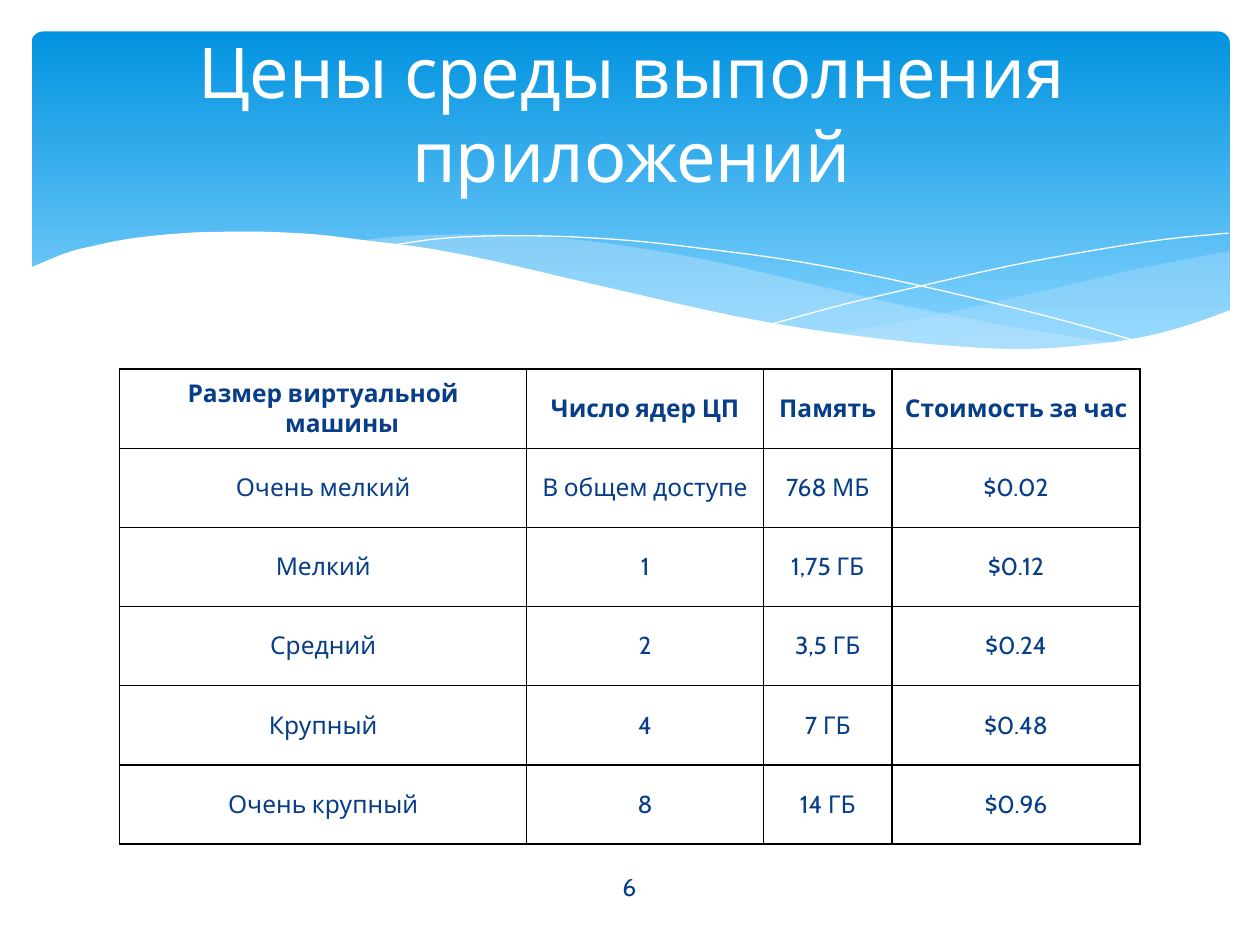
from pptx import Presentation
from pptx import util as u
from pptx.dml.color import RGBColor
from pptx.enum import shapes, text
from pptx.oxml import parse_xml
from pptx.oxml.ns import nsdecls, qn

FONT = "Cabin"
NAVY = "073E87"
WHITE = "FFFFFF"
PALE_BLUE = "C6E7FC"

RIGHT_SWELL_TOP = [(9.76, 1.99), (9.35, 2.07), (8.91, 2.16), (8.32, 2.3), (7.79, 2.42),
                   (7.29, 2.53), (6.61, 2.65)]
RIGHT_SWELL_BOTTOM = [(6.61, 2.65), (7.05, 2.71), (7.57, 2.76), (8.03, 2.78), (8.54, 2.76),
                      (8.97, 2.7), (9.35, 2.61), (9.76, 2.47)]
MIDDLE_SWELL_TOP = [(8.93, 2.73), (8.37, 2.65), (7.75, 2.54), (7.06, 2.4), (6.29, 2.22),
                    (5.69, 2.08), (5.14, 1.98), (4.65, 1.91), (4.2, 1.87), (3.8, 1.86),
                    (3.28, 1.87), (2.86, 1.91)]
MIDDLE_SWELL_BOTTOM = [(2.86, 1.91), (3.42, 1.99), (4.04, 2.11), (4.91, 2.32), (5.66, 2.48),
                       (6.34, 2.61), (6.95, 2.7), (7.48, 2.76), (7.96, 2.78), (8.48, 2.77),
                       (8.93, 2.73)]
FALLING_LINE = [(3.09, 1.95), (3.53, 1.89), (4.16, 1.87), (4.89, 1.9), (5.56, 1.97),
                (6.36, 2.08), (7.27, 2.26), (8.31, 2.51), (9.07, 2.72)]
RISING_LINE = [(6.13, 2.57), (6.72, 2.41), (7.48, 2.23), (8.06, 2.1), (8.66, 1.99),
               (9.24, 1.9), (9.75, 1.85)]
WHITE_WAVE = [(9.77, 2.46), (9.4, 2.59), (8.99, 2.69), (8.5, 2.75), (8.09, 2.77),
              (7.61, 2.75), (7.08, 2.7), (6.47, 2.62), (5.79, 2.5), (5.03, 2.33),
              (4.47, 2.2), (3.91, 2.07), (3.39, 1.97), (2.92, 1.91), (2.5, 1.86),
              (2.11, 1.84), (1.77, 1.84), (1.46, 1.85), (1.06, 1.89), (0.75, 1.95),
              (0.52, 2.01), (0.23, 2.13)]

PRICES = [
    ["Размер виртуальной машины", "Число ядер ЦП", "Память", "Стоимость за час"],
    ["Очень мелкий", "В общем доступе", "768 МБ", "$0.02"],
    ["Мелкий", "1", "1,75 ГБ", "$0.12"],
    ["Средний", "2", "3,5 ГБ", "$0.24"],
    ["Крупный", "4", "7 ГБ", "$0.48"],
    ["Очень крупный", "8", "14 ГБ", "$0.96"],
]


def color(value):
    return RGBColor.from_string(value)


def write(frame, content, size=14, fill=NAVY, bold=False, hanging=0):
    frame.word_wrap = True
    paragraph = frame.paragraphs[0]
    paragraph.alignment = text.PP_ALIGN.CENTER
    if hanging:
        properties = paragraph._p.get_or_add_pPr()
        properties.set("marL", str(u.Inches(hanging)))
        properties.set("indent", str(-u.Inches(hanging)))
    run = paragraph.add_run()
    run.text = content
    run.font.name = FONT
    run.font.size = u.Pt(size)
    run.font.bold = bold
    run.font.color.rgb = color(fill)


def smooth(knots, steps=4):
    padded = [knots[0], *knots, knots[-1]]
    points = []
    for a, b, c, d in zip(padded, padded[1:], padded[2:], padded[3:]):
        for step in range(steps):
            t = step / steps
            points.append(tuple(
                q + t / 2 * (r - p + t * (2 * p - 5 * q + 4 * r - s + t * (3 * (q - r) + s - p)))
                for p, q, r, s in zip(a, b, c, d)))
    return points + [knots[-1]]


def add_curve(group, points, fill=None, opacity=100, line=None):
    points = [(u.Inches(x), u.Inches(y)) for x, y in points]
    builder = group.shapes.build_freeform(*points[0])
    builder.add_line_segments(points[1:], close=fill is not None)
    shape = builder.convert_to_shape()
    shape.shadow.inherit = False
    if fill:
        shape.fill.solid()
        shape.fill.fore_color.rgb = color(fill)
        if opacity < 100:
            rgb = shape.element.spPr.find(f"{qn('a:solidFill')}/{qn('a:srgbClr')}")
            rgb.append(parse_xml(f'<a:alpha {nsdecls("a")} val="{opacity * 1000}"/>'))
    else:
        shape.fill.background()
    if line:
        shape.line.color.rgb = color(line)
        shape.line.width = u.Pt(0)
    else:
        shape.line.fill.background()


def add_banner(slide, left, top, width, height):
    banner = slide.shapes.add_shape(shapes.MSO_SHAPE.ROUNDED_RECTANGLE, left, top, width, height)
    banner.adjustments[0] = 0.034
    banner.shadow.inherit = False
    banner.line.fill.background()
    banner.fill.gradient()
    banner.fill.gradient_angle = 270
    for stop, position, value in zip(banner.fill.gradient_stops, (0, 0.9), ("0293E0", "83D3FE")):
        stop.position = position
        stop.color.rgb = color(value)


def add_waves(slide):
    group = slide.shapes.add_group_shape()
    add_curve(group, smooth(RIGHT_SWELL_TOP) + smooth(RIGHT_SWELL_BOTTOM), PALE_BLUE, 29)
    add_curve(group, smooth(MIDDLE_SWELL_TOP) + smooth(MIDDLE_SWELL_BOTTOM), PALE_BLUE, 40)
    add_curve(group, smooth(FALLING_LINE), line=WHITE)
    add_curve(group, smooth(RISING_LINE), line=WHITE)
    add_curve(group, smooth(WHITE_WAVE) + [(0.23, 3.29), (9.77, 3.29)], WHITE)


def place_title(slide, content, left, top, width, height):
    title = slide.shapes.title
    title.left, title.top, title.width, title.height = left, top, width, height
    frame = title.text_frame
    frame.auto_size = text.MSO_AUTO_SIZE.NONE
    frame.vertical_anchor = text.MSO_ANCHOR.MIDDLE
    frame.margin_bottom = u.Inches(0.68)
    write(frame, content, size=40, fill=WHITE)
    title.element.getparent().append(title.element)


def add_borders(cell):
    properties = cell._tc.get_or_add_tcPr()
    for index, side in enumerate(("lnL", "lnR", "lnT", "lnB")):
        properties.insert(index, parse_xml(
            f'<a:{side} {nsdecls("a")} w="{u.Pt(1)}"><a:solidFill>'
            f'<a:srgbClr val="000000"/></a:solidFill></a:{side}>'))


def add_price_table(slide, left, top, width, height):
    table = slide.shapes.add_table(len(PRICES), len(PRICES[0]), left, top, width, height).table
    table.first_row = table.horz_banding = False
    for column, column_width in zip(table.columns, (3.23, 1.88, 1.02, 1.97)):
        column.width = u.Inches(column_width)
    for row_index, values in enumerate(PRICES):
        for column_index, value in enumerate(values):
            cell = table.cell(row_index, column_index)
            cell.vertical_anchor = text.MSO_ANCHOR.MIDDLE
            cell.fill.solid()
            cell.fill.fore_color.rgb = color(WHITE)
            add_borders(cell)
            write(cell.text_frame, value, bold=row_index == 0, hanging=0.3)


def add_page_number(slide, number, left, top, width, height):
    frame = slide.shapes.add_textbox(left, top, width, height).text_frame
    frame.vertical_anchor = text.MSO_ANCHOR.MIDDLE
    write(frame, number)


def main():
    presentation = Presentation()
    presentation.slide_width, presentation.slide_height = u.Inches(10), u.Inches(7.5)
    slide = presentation.slides.add_slide(presentation.slide_layouts[5])
    add_banner(slide, u.Inches(0.25), u.Inches(0.25), u.Inches(9.51), u.Inches(2.7))
    add_waves(slide)
    place_title(slide, "Цены среды выполнения приложений",
                u.Inches(0.51), u.Inches(0.52), u.Inches(9), u.Inches(1.37))
    add_price_table(slide, u.Inches(0.95), u.Inches(2.93), u.Inches(8.1), u.Inches(3.77))
    add_page_number(slide, "6", u.Inches(4.36), u.Inches(6.84), u.Inches(1.27), u.Inches(0.4))
    presentation.save("out.pptx")


if __name__ == "__main__":
    main()
